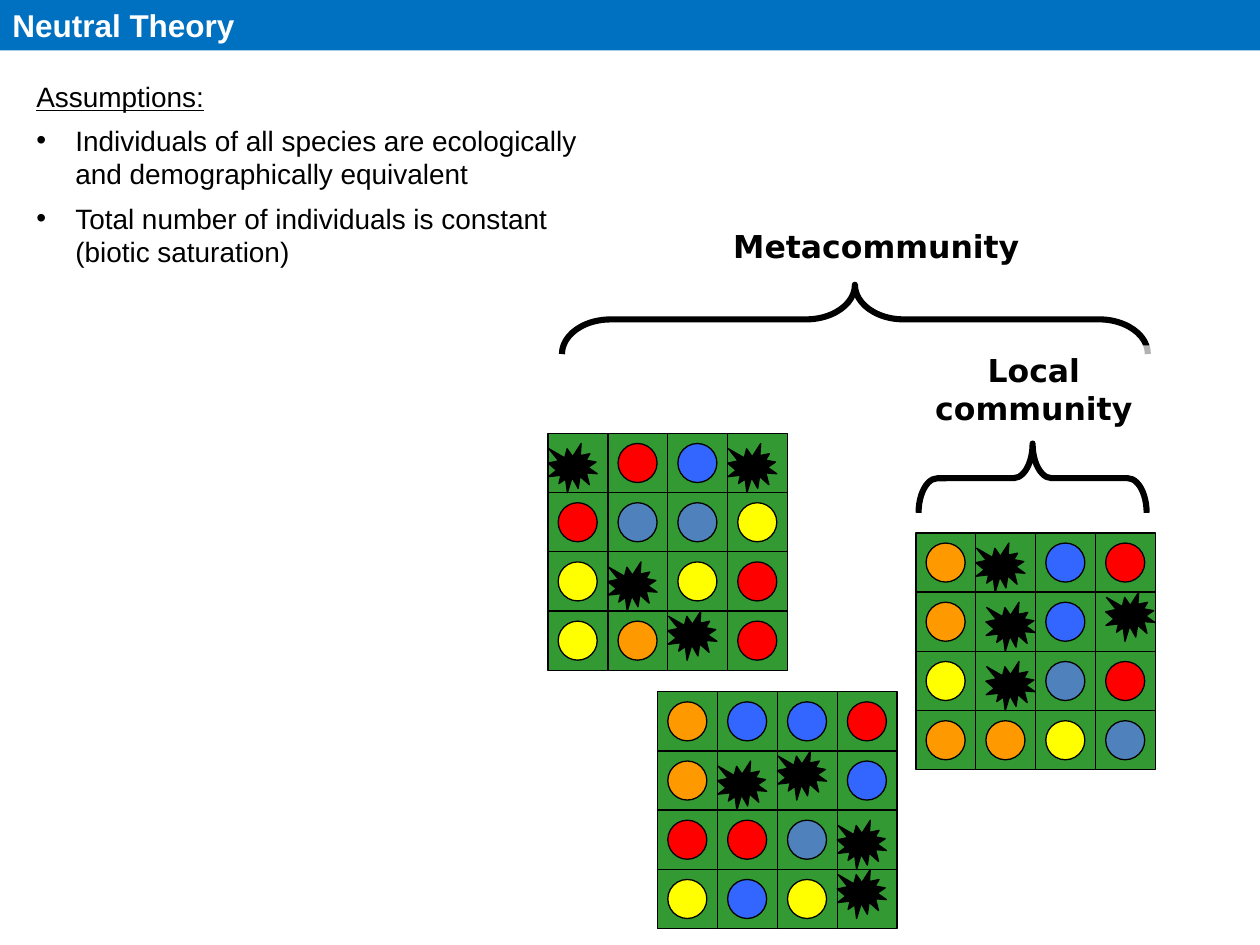
import pptx
import pptx.dml.color
import pptx.enum.shapes
import pptx.enum.text
import pptx.oxml
import pptx.util
from pptx.util import Inches

SHAPE = pptx.enum.shapes.MSO_SHAPE
ALIGN = pptx.enum.text.PP_ALIGN

CELL_WIDTH, CELL_HEIGHT = 0.475, 0.47
DISC_SIZE, BURST_SIZE, INSET = 0.31, 0.39, 0.08

SPECIES = {"r": "FF0000", "b": "3366FF", "s": "4F81BD", "y": "FFFF00", "o": "FF9900"}
DEATHS = {"T": (0, 0), "L": (0, INSET), "U": (INSET, 0), "R": (INSET, INSET)}
COMMUNITIES = [
    (4.35, 3.44, ["LrbL", "rssy", "yLyr", "yoTr"]),
    (5.22, 5.49, ["obbr", "oLTb", "rrsL", "ybyT"]),
    (7.27, 4.23, ["oLbr", "oRbU", "yRsr", "ooys"]),
]
ASSUMPTIONS = [
    "Assumptions:",
    "Individuals of all species are ecologically and demographically equivalent",
    "Total number of individuals is constant (biotic saturation)",
]


def color(value):
    return pptx.dml.color.RGBColor.from_string(value)


def add_shape(shapes, kind, left, top, width, height, fill=None, line_width=None):
    shape = shapes.add_shape(kind, Inches(left), Inches(top), Inches(width), Inches(height))
    shape.shadow.inherit = False
    if fill:
        shape.fill.solid()
        shape.fill.fore_color.rgb = color(fill)
    else:
        shape.fill.background()
    if line_width:
        shape.line.color.rgb = color("000000")
        shape.line.width = pptx.util.Pt(line_width)
    else:
        shape.line.fill.background()
    return shape


def format_text(para, size, font, value, bold=False, underline=False):
    for span in para.runs:
        span.font.size = pptx.util.Pt(size)
        span.font.name = font
        span.font.color.rgb = color(value)
        span.font.bold = bold
        span.font.underline = underline


def add_brace(shapes, left, top, width, height, curve):
    brace = add_shape(shapes, SHAPE.LEFT_BRACE, left, top, width, height, line_width=3.5)
    brace.rotation = 90
    brace.adjustments[0] = curve


def set_opacity(shape, percent):
    fill = shape.fill.fore_color._xFill
    alpha = pptx.oxml.parse_xml(
        '<a:alpha xmlns:a="http://schemas.openxmlformats.org/drawingml/2006/main" '
        f'val="{percent * 1000}"/>'
    )
    fill[0].append(alpha)


def add_label(shapes, text, left, top, width, height, fill, align, font, value):
    box = add_shape(shapes, SHAPE.RECTANGLE, left, top, width, height, fill)
    frame = box.text_frame
    frame.word_wrap = True
    frame.vertical_anchor = pptx.enum.text.MSO_ANCHOR.TOP
    frame.text = text
    para = frame.paragraphs[0]
    para.alignment = align
    format_text(para, 18, font, value, bold=True)
    return box


def add_community(shapes, left, top, rows):
    group = shapes.add_group_shape().shapes
    cells = [
        (left + column * CELL_WIDTH, top + row * CELL_HEIGHT, code)
        for row, codes in enumerate(rows)
        for column, code in enumerate(codes)
    ]
    for x, y, code in cells:
        add_shape(group, SHAPE.RECTANGLE, x, y, CELL_WIDTH, CELL_HEIGHT, "339933", 0.75)
    for x, y, code in cells:
        if code in SPECIES:
            add_shape(group, SHAPE.OVAL, x + INSET, y + INSET,
                      DISC_SIZE, DISC_SIZE, SPECIES[code], 0.75)
        else:
            shift_x, shift_y = DEATHS[code]
            add_shape(group, SHAPE.EXPLOSION1, x + shift_x, y + shift_y,
                      BURST_SIZE, BURST_SIZE, "000000", 0.75)


def add_bullet(para):
    properties = para._p.get_or_add_pPr()
    properties.set("marL", str(Inches(0.31)))
    properties.set("indent", str(-Inches(0.31)))
    properties.append(pptx.oxml.parse_xml(
        '<a:buFont xmlns:a="http://schemas.openxmlformats.org/drawingml/2006/main" typeface="Arial"/>'
    ))
    properties.append(pptx.oxml.parse_xml(
        '<a:buChar xmlns:a="http://schemas.openxmlformats.org/drawingml/2006/main" char="•"/>'
    ))


def add_assumptions(shapes):
    box = shapes.add_textbox(Inches(0.19), Inches(0.58), Inches(4.64), Inches(1.62))
    frame = box.text_frame
    frame.word_wrap = True
    frame.text = "\n".join(ASSUMPTIONS)
    for index, para in enumerate(frame.paragraphs):
        para.space_after = pptx.util.Pt(6)
        format_text(para, 16, "Arial", "000000", underline=index == 0)
        if index > 0:
            add_bullet(para)


def main():
    deck = pptx.Presentation()
    deck.slide_width, deck.slide_height = Inches(10), Inches(7.5)
    page = deck.slides.add_slide(deck.slide_layouts[6])
    shapes = page.shapes
    add_brace(shapes, 7.92, 2.89, 0.55, 1.81, 0.274)
    add_brace(shapes, 6.51, 0.21, 0.55, 4.65, 0.703)
    for text, left, top, width, height, align in [
        ("Local community", 7.08, 2.74, 2.25, 0.71, ALIGN.CENTER),
        ("Metacommunity", 5.33, 1.75, 2.86, 0.4, ALIGN.RIGHT),
    ]:
        label = add_label(shapes, text, left, top, width, height,
                          "FFFFFF", align, "DejaVu Sans", "000000")
        set_opacity(label, 70)
    for left, top, rows in COMMUNITIES:
        add_community(shapes, left, top, rows)
    add_assumptions(shapes)
    add_label(shapes, "Neutral Theory", 0, 0, 10, 0.4,
              "0070C0", ALIGN.LEFT, "Arial", "FFFFFF")
    deck.save("out.pptx")


if __name__ == "__main__":
    main()
